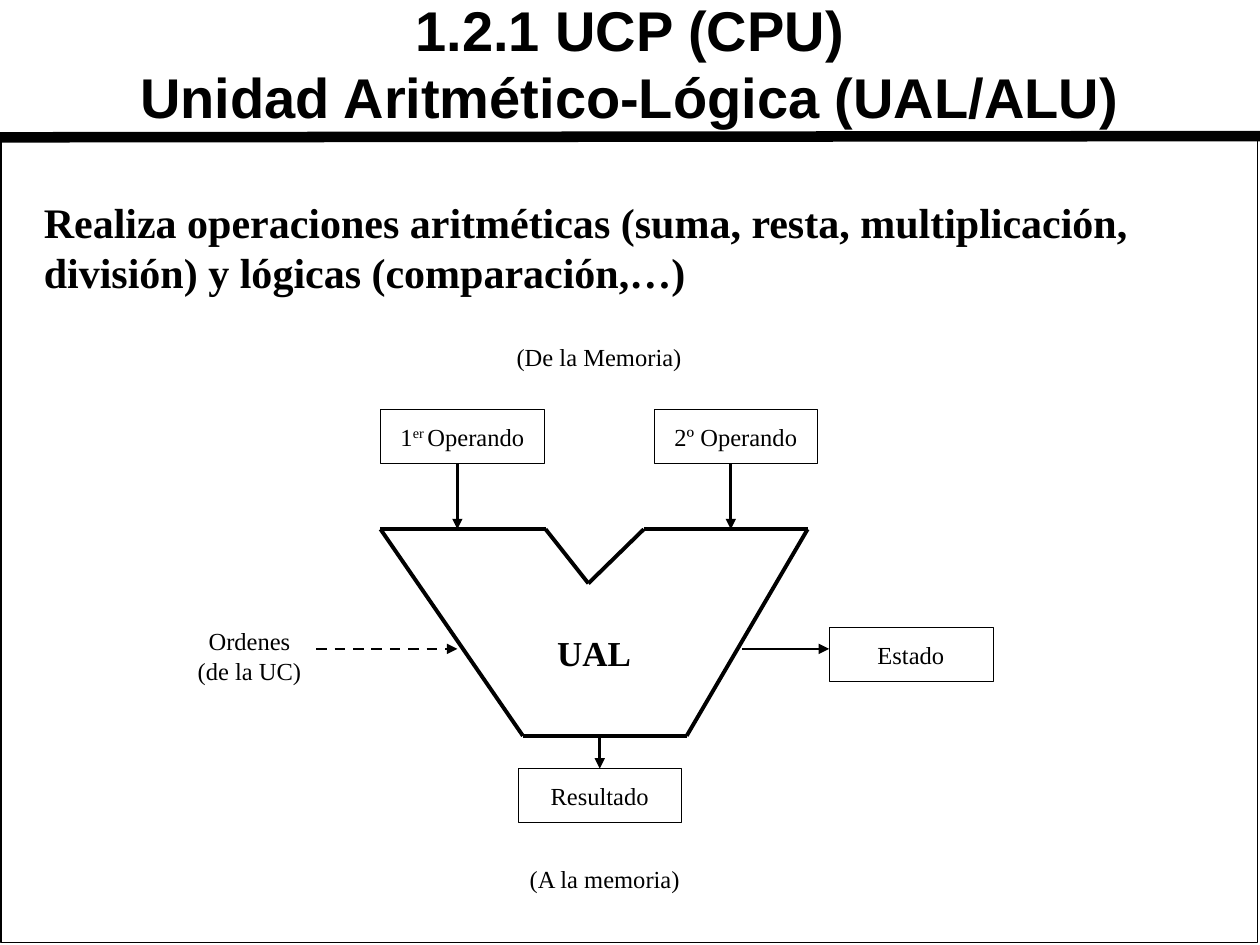
from dataclasses import dataclass
from itertools import pairwise

from lxml.etree import SubElement
from pptx import Presentation
from pptx.dml.color import RGBColor
from pptx.enum.dml import MSO_LINE
from pptx.enum.shapes import MSO_CONNECTOR, MSO_SHAPE
from pptx.enum.text import MSO_ANCHOR, PP_ALIGN
from pptx.oxml.ns import qn
from pptx.util import Emu, Inches, Pt

BLACK = RGBColor(0, 0, 0)
SLIDE_WIDTH, SLIDE_HEIGHT = Inches(10), Inches(7.5)
COLUMNS, ROWS = 100, 75
BOX_SIZE = (13, 4.3)
HEADING_FONT, BODY_FONT = "Arial", "Times New Roman"


@dataclass(frozen=True)
class Span:
    text: str
    superscript: bool = False


@dataclass(frozen=True)
class Label:
    left: float
    top: float
    width: float
    height: float
    lines: tuple[str, ...]
    size: int = 14
    bold: bool = False
    align: PP_ALIGN = PP_ALIGN.CENTER
    wrap: bool = False
    font: str = BODY_FONT


@dataclass(frozen=True)
class Box:
    left: float
    top: float
    spans: tuple[Span, ...]


@dataclass(frozen=True)
class Arrow:
    start: tuple[float, float]
    end: tuple[float, float]
    dashed: bool = False


LABELS = (
    Label(2.5, 0, 95, 10, ("1.2.1 UCP (CPU)", "Unidad Aritmético-Lógica (UAL/ALU)"),
          size=32, bold=True, wrap=True, font=HEADING_FONT),
    Label(2.5, 15.1, 93.3, 9,
          ("Realiza operaciones aritméticas (suma, resta, multiplicación, "
           "división) y lógicas (comparación,…)",),
          size=24, bold=True, align=PP_ALIGN.LEFT, wrap=True),
    Label(40, 26.7, 15.1, 3.3, ("(De la Memoria)",)),
    Label(43.2, 49.6, 7.9, 4.3, ("UAL",), size=20, bold=True),
    Label(14.7, 49.2, 10.2, 5.7, ("Ordenes", "(de la UC)")),
    Label(41, 68.1, 14, 3.3, ("(A la memoria)",)),
)
BOXES = (
    Box(30.2, 32.5, (Span("1"), Span("er ", superscript=True), Span("Operando"))),
    Box(51.9, 32.5, (Span("2º Operando"),)),
    Box(41.1, 61, (Span("Resultado"),)),
    Box(65.8, 49.8, (Span("Estado"),)),
)
UAL_CORNERS = (
    (30.2, 42), (43.3, 42), (46.7, 46.3), (51.1, 42),
    (64.1, 42), (54.5, 58.4), (41.5, 58.4), (30.2, 42),
)
ARROWS = (
    Arrow((36.3, 36.8), (36.3, 42)),
    Arrow((58, 36.8), (58, 42)),
    Arrow((47.6, 58.4), (47.6, 61)),
    Arrow((58.9, 51.5), (65.8, 51.5)),
    Arrow((25.1, 51.5), (36.3, 51.5), dashed=True),
)


def across(columns: float) -> Emu:
    return Emu(round(SLIDE_WIDTH * columns / COLUMNS))


def down(rows: float) -> Emu:
    return Emu(round(SLIDE_HEIGHT * rows / ROWS))


def write_span(para, span: Span, size: int, bold: bool = False, font: str = BODY_FONT) -> None:
    run = para.add_run()
    run.text = span.text
    run.font.name = font
    run.font.size = Pt(size)
    run.font.bold = bold
    run.font.color.rgb = BLACK
    if span.superscript:
        run.font._element.set("baseline", "30000")


def draw_label(page, label: Label) -> None:
    box = page.shapes.add_textbox(across(label.left), down(label.top),
                                  across(label.width), down(label.height))
    frame = box.text_frame
    frame.word_wrap = label.wrap
    frame.vertical_anchor = MSO_ANCHOR.MIDDLE
    for index, line in enumerate(label.lines):
        para = frame.add_paragraph() if index else frame.paragraphs[0]
        para.alignment = label.align
        write_span(para, Span(line), label.size, label.bold, label.font)


def draw_rectangle(page, left: float, top: float, width: float, height: float,
                   weight: float):
    rectangle = page.shapes.add_shape(MSO_SHAPE.RECTANGLE, across(left), down(top),
                                      across(width), down(height))
    rectangle.shadow.inherit = False
    rectangle.fill.background()
    rectangle.line.color.rgb = BLACK
    rectangle.line.width = Pt(weight)
    return rectangle


def draw_box(page, box: Box) -> None:
    frame = draw_rectangle(page, box.left, box.top, *BOX_SIZE, weight=0.25).text_frame
    frame.vertical_anchor = MSO_ANCHOR.MIDDLE
    para = frame.paragraphs[0]
    para.alignment = PP_ALIGN.CENTER
    for span in box.spans:
        write_span(para, span, size=14)


def draw_line(page, start: tuple[float, float], end: tuple[float, float], weight: float):
    line = page.shapes.add_connector(MSO_CONNECTOR.STRAIGHT, across(start[0]), down(start[1]),
                                     across(end[0]), down(end[1]))
    line.line.color.rgb = BLACK
    line.line.width = Pt(weight)
    SubElement(line._element.spPr, qn("a:effectLst"))
    return line


def draw_arrow(page, arrow: Arrow) -> None:
    line = draw_line(page, arrow.start, arrow.end, weight=1.5).line
    if arrow.dashed:
        line.dash_style = MSO_LINE.DASH
    SubElement(line._get_or_add_ln(), qn("a:tailEnd"), type="triangle")


def main() -> None:
    deck = Presentation()
    deck.slide_width, deck.slide_height = SLIDE_WIDTH, SLIDE_HEIGHT
    page = deck.slides.add_slide(deck.slide_layouts[6])
    draw_line(page, (0, 10.9), (100.2, 10.8), weight=6)
    draw_rectangle(page, 0.1, 10.8, 99.7, 64, weight=1)
    for box in BOXES:
        draw_box(page, box)
    for start, end in pairwise(UAL_CORNERS):
        draw_line(page, start, end, weight=2.25)
    for label in LABELS:
        draw_label(page, label)
    for arrow in ARROWS:
        draw_arrow(page, arrow)
    deck.save("out.pptx")


if __name__ == "__main__":
    main()
